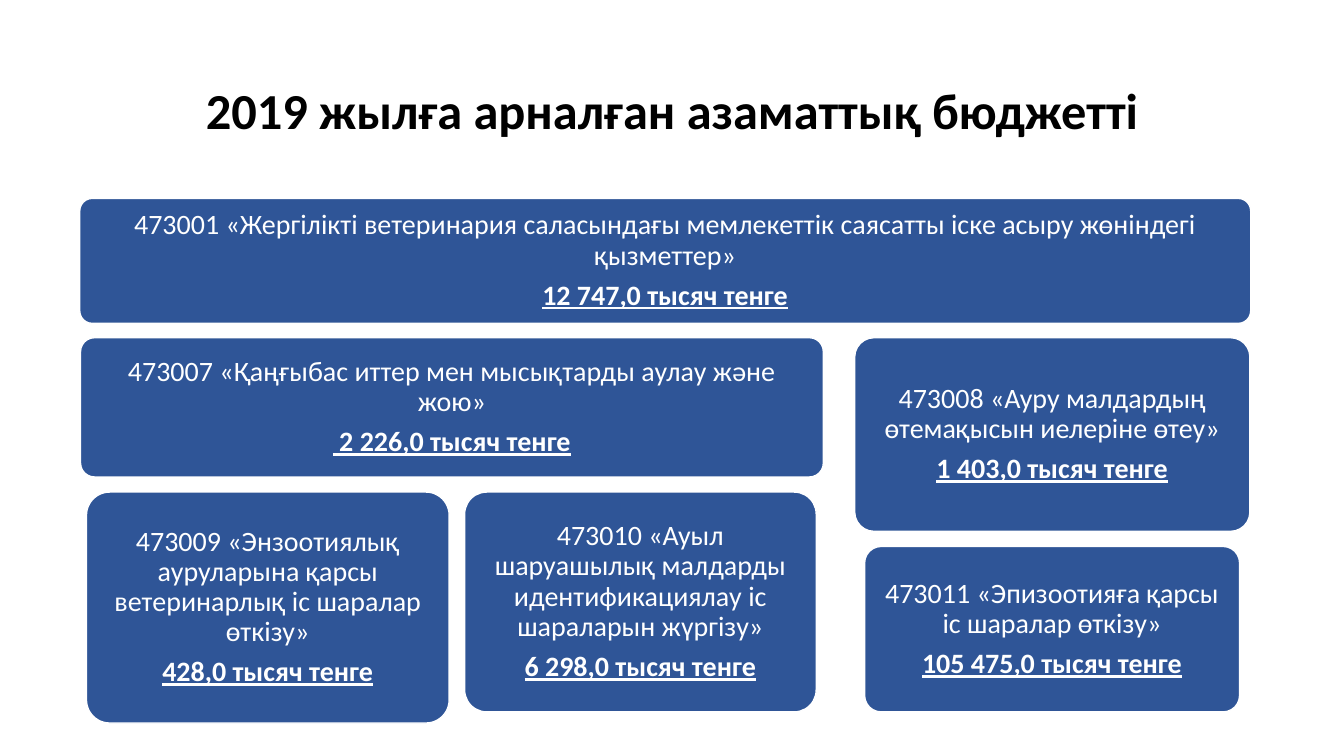
from dataclasses import dataclass

from pptx import Presentation
from pptx import util as u
from pptx.dml import color
from pptx.enum import shapes, text


@dataclass(frozen=True)
class Theme:
    """Colours, font and type formats of the slide."""
    font: str = "Calibri"
    box: str = "2F5597"
    white: str = "FFFFFF"
    black: str = "000000"
    title_size: int = 36
    body_size: int = 20
    gap: int = 7


class BudgetSlide:
    """Draws the title and budget boxes on one slide."""

    def __init__(self, prs, theme):
        """Add a blank slide and keep its style."""
        self.theme = theme
        self.s = prs.slides.add_slide(prs.slide_layouts[6])

    def frame(self, sp, inset):
        """Prepare the text frame of a shape."""
        tf = sp.text_frame
        fmt = {"word_wrap": True, "vertical_anchor": text.MSO_ANCHOR.MIDDLE}
        fmt.update({f"margin_{side}": u.Cm(inset)
                    for side in ("left", "top", "right", "bottom")})
        for name, value in fmt.items():
            setattr(tf, name, value)
        return tf

    def paragraph(self, p, words, rgb, size, space_after=0, **font):
        """Fill one centred paragraph."""
        r = p.add_run()
        r.text = words
        para_fmt = {"alignment": text.PP_ALIGN.CENTER, "line_spacing": 0.9,
                    "space_after": u.Pt(space_after)}
        font_fmt = {"name": self.theme.font, "size": u.Pt(size), **font}
        for target, fmt in ((p, para_fmt), (r.font, font_fmt)):
            for name, value in fmt.items():
                setattr(target, name, value)
        r.font.color.rgb = color.RGBColor.from_string(rgb)

    def title(self, words, *place):
        """Add the slide title."""
        sp = self.s.shapes.add_textbox(*map(u.Cm, place))
        tf = self.frame(sp, 0.25)
        self.paragraph(tf.paragraphs[0], words, self.theme.black,
                       self.theme.title_size, bold=True)

    def box(self, programme, amount, *place):
        """Add a rounded box with a programme and its amount."""
        t = self.theme
        sp = self.s.shapes.add_shape(
            shapes.MSO_SHAPE.ROUNDED_RECTANGLE, *map(u.Cm, place))
        sp.adjustments[0] = 0.1
        sp.shadow.inherit = False
        sp.fill.solid()
        sp.fill.fore_color.rgb = color.RGBColor.from_string(t.box)
        sp.line.color.rgb = color.RGBColor.from_string(t.white)
        sp.line.width = u.Pt(1)
        tf = self.frame(sp, 0.2)
        self.paragraph(tf.paragraphs[0], programme, t.white, t.body_size,
                       t.gap)
        self.paragraph(tf.add_paragraph(), f"{amount} тысяч тенге", t.white,
                       t.body_size, t.gap, bold=True, underline=True)


BOXES = [
    ("473001 «Жергілікті ветеринария саласындағы мемлекеттік саясатты "
     "іске асыру жөніндегі қызметтер»", "12 747,0", 2.01, 5, 29.51, 3.15),
    ("473007 «Қаңғыбас иттер мен мысықтарды аулау және жою»",
     " 2 226,0", 2.03, 8.51, 18.72, 3.51),
    ("473009 «Энзоотиялық ауруларына қарсы ветеринарлық іс шаралар өткізу»",
     "428,0", 2.18, 12.4, 9.14, 5.82),
    ("473010 «Ауыл шаруашылық малдарды идентификациялау іс шараларын жүргізу»",
     "6 298,0", 11.71, 12.4, 8.86, 5.54),
    ("473008 «Ауру малдардың өтемақысын иелеріне өтеу»",
     "1 403,0", 21.54, 8.51, 9.96, 4.88),
    ("473011 «Эпизоотияға қарсы іс шаралар өткізу»",
     "105 475,0", 21.79, 13.77, 9.45, 4.17),
]


def main():
    """Build and save the budget slide."""
    prs = Presentation()
    prs.slide_width, prs.slide_height = u.Cm(33.87), u.Cm(19.05)
    slide = BudgetSlide(prs, Theme())
    slide.title("2019 жылға арналған азаматтық бюджетті",
                2.34, 1.02, 29.21, 3.68)
    for box in BOXES:
        slide.box(*box)
    prs.save("out.pptx")


if __name__ == "__main__":
    main()
